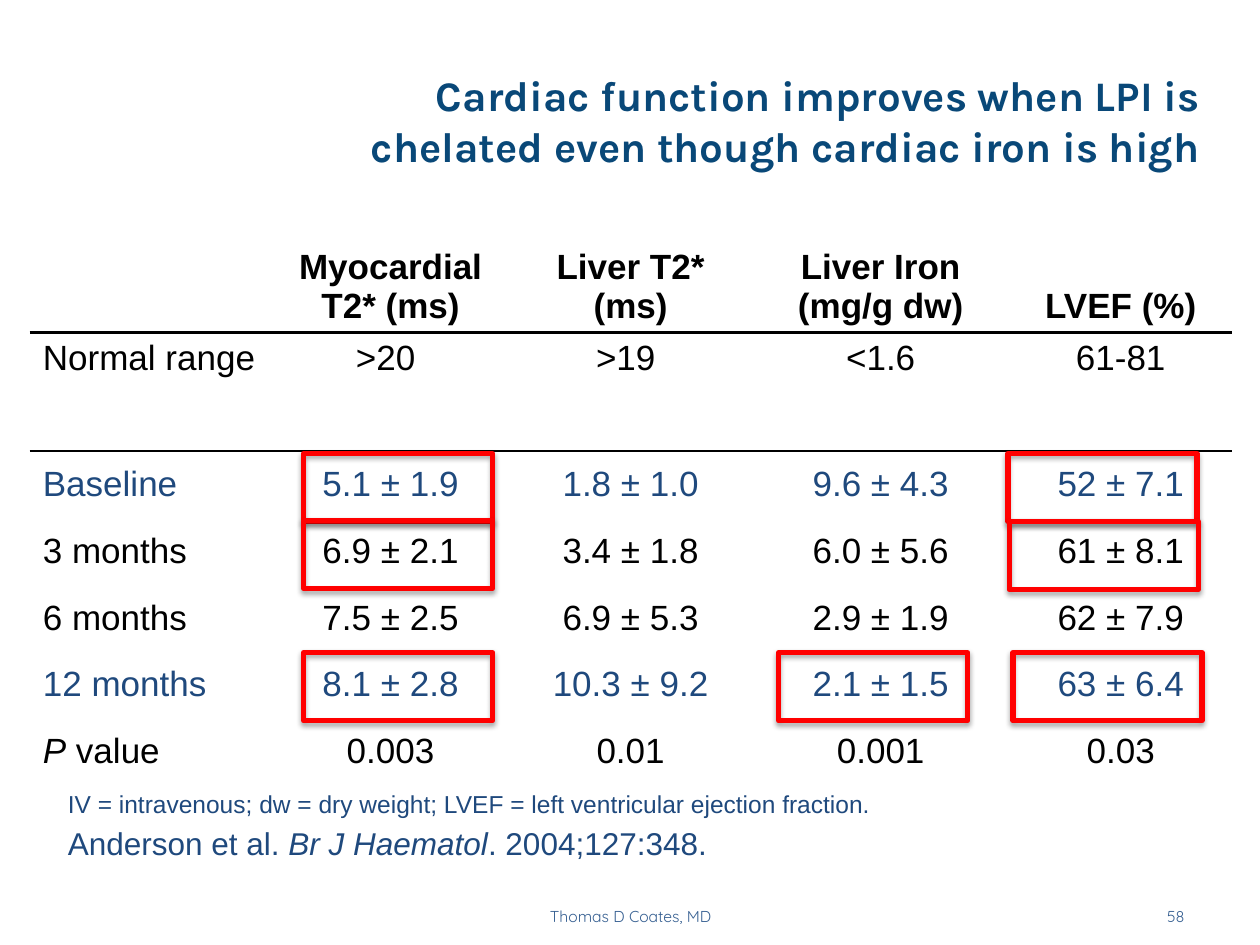
"""Build the slide on cardiac function during chelation, with a results table."""
from lxml import etree
from pptx import Presentation
from pptx.dml.color import RGBColor
from pptx.enum.shapes import MSO_SHAPE
from pptx.enum.text import MSO_ANCHOR, MSO_AUTO_SIZE, PP_ALIGN
from pptx.oxml import parse_xml
from pptx.util import Inches, Pt

LEFT, CENTER, RIGHT = PP_ALIGN.LEFT, PP_ALIGN.CENTER, PP_ALIGN.RIGHT
TOP, MIDDLE, BOTTOM = MSO_ANCHOR.TOP, MSO_ANCHOR.MIDDLE, MSO_ANCHOR.BOTTOM
FIT_SHAPE, NO_FIT = MSO_AUTO_SIZE.SHAPE_TO_FIT_TEXT, MSO_AUTO_SIZE.NONE
RECT = MSO_SHAPE.RECTANGLE
NS = 'xmlns:a="http://schemas.openxmlformats.org/drawingml/2006/main"'

COLORS = {
    "title": "094878",
    "footer": "376092",
    "accent": "1F497D",
    "text": "000000",
    "frame": "FF0000",
}
TABLE_LEFT, TABLE_TOP = 0.24, 1.7
COLS = [1.91, 1.9, 1.91, 2.06, 1.75]
ROWS = [0.94] * 2 + [0.53] * 5
DATA = [
    ["", "Myocardial T2* (ms)", "Liver T2* (ms)", "Liver Iron (mg/g dw)", "LVEF (%)"],
    ["Normal range", ">20 ", ">19 ", "<1.6", "61-81"],
    ["Baseline", "5.1 ± 1.9", "1.8 ± 1.0", "9.6 ± 4.3", "52 ± 7.1"],
    ["3 months", "6.9 ± 2.1", "3.4 ± 1.8", "6.0 ± 5.6", "61 ± 8.1"],
    ["6 months", "7.5 ± 2.5", "6.9 ± 5.3", "2.9 ± 1.9", "62 ± 7.9"],
    ["12 months", "8.1 ± 2.8", "10.3 ± 9.2", "2.1 ± 1.5", "63 ± 6.4"],
    ["|P| value", "0.003", "0.01", "0.001", "0.03"],
]
ACCENT_ROWS = {"Baseline", "12 months"}
FRAMES = [(2.41, 3.6), (8, 3.6), (2.41, 4.13), (8.01, 4.14),
          (2.41, 5.18), (6.18, 5.18), (8.04, 5.18)]


def write(p, text, size, color, font="Arial", align=LEFT, bold=False):
    """Fill a paragraph; text between bars is italic."""
    p.alignment = align
    for i, part in enumerate(text.split("|")):
        if part:
            r = p.add_run()
            r.text = part
            r.font.size, r.font.name = Pt(size), font
            r.font.bold, r.font.italic = bold, i % 2 == 1
            r.font.color.rgb = RGBColor.from_string(COLORS[color])


def add_border(cell, side):
    """Draw a rule along one side of a cell."""
    ln = etree.fromstring(
        f'<a:{side} {NS} w="{Pt(1.5)}"><a:solidFill><a:srgbClr val="{COLORS["text"]}"/>'
        f'</a:solidFill></a:{side}>')
    cell._tc.get_or_add_tcPr().insert(0, parse_xml(etree.tostring(ln)))


prs = Presentation()
prs.slide_width, prs.slide_height = Inches(10), Inches(7.5)
s = prs.slides.add_slide(prs.slide_layouts[5])

title = s.shapes.title
title.left, title.top, title.width, title.height = map(Inches, (2.64, 0.39, 6.98, 1.13))
tf = title.text_frame
tf.word_wrap, tf.auto_size, tf.vertical_anchor = True, NO_FIT, MIDDLE
write(tf.paragraphs[0],
      "Cardiac function improves when LPI is chelated even though cardiac iron is high",
      24, "title", "Karla", RIGHT, True)

for left, width, text, align in [(3.42, 3.17, "Thomas D Coates, MD", CENTER),
                                 (7.17, 2.33, "58", RIGHT)]:
    tf = s.shapes.add_textbox(*map(Inches, (left, 7.07, width, 0.4))).text_frame
    tf.word_wrap, tf.vertical_anchor = True, MIDDLE
    write(tf.paragraphs[0], text, 9, "footer", "Quicksand", align)

table = s.shapes.add_table(len(ROWS), len(COLS), *map(
    Inches, (TABLE_LEFT, TABLE_TOP, sum(COLS), sum(ROWS)))).table
table.first_row = table.horz_banding = False
for column, width in zip(table.columns, COLS):
    column.width = Inches(width)
for i, (row, values) in enumerate(zip(table.rows, DATA)):
    row.height = Inches(ROWS[i])
    color = "accent" if values[0] in ACCENT_ROWS else "text"
    for j, (cell, value) in enumerate(zip(row.cells, values)):
        cell.fill.background()
        cell.vertical_anchor = (BOTTOM, TOP)[i] if i < 2 else MIDDLE
        p = cell.text_frame.paragraphs[0]
        p.space_before = Pt(4)
        write(p, value, 20, color, align=CENTER if j else LEFT, bold=i == 0)
        if i < 2:
            add_border(cell, ("lnB", "lnT")[i])

tf = s.shapes.add_textbox(*map(Inches, (0.44, 6.19, 6.63, 0.7))).text_frame
tf.word_wrap, tf.auto_size, tf.vertical_anchor = False, FIT_SHAPE, BOTTOM
p = tf.paragraphs[0]
p.space_after = Pt(3.5)
write(p, "IV = intravenous; dw = dry weight; LVEF = left ventricular ejection fraction.",
      14, "accent")
write(tf.add_paragraph(), "Anderson et al. |Br J Haematol|. 2004;127:348.", 18, "accent")

for left, top in FRAMES:
    sp = s.shapes.add_shape(RECT, *map(Inches, (left, top, 1.5, 0.54)))
    sp.fill.background()
    sp.line.color.rgb = RGBColor.from_string(COLORS["frame"])
    sp.line.width = Pt(3)
    sp.shadow.inherit = False
    sp._element.spPr.find("{*}effectLst").append(parse_xml(
        f'<a:outerShdw {NS} blurRad="{Pt(3.1)}" dist="{Pt(1.8)}" dir="5400000" '
        f'rotWithShape="0"><a:srgbClr val="{COLORS["text"]}"><a:alpha val="35000"/>'
        '</a:srgbClr></a:outerShdw>'))

prs.save("out.pptx")
